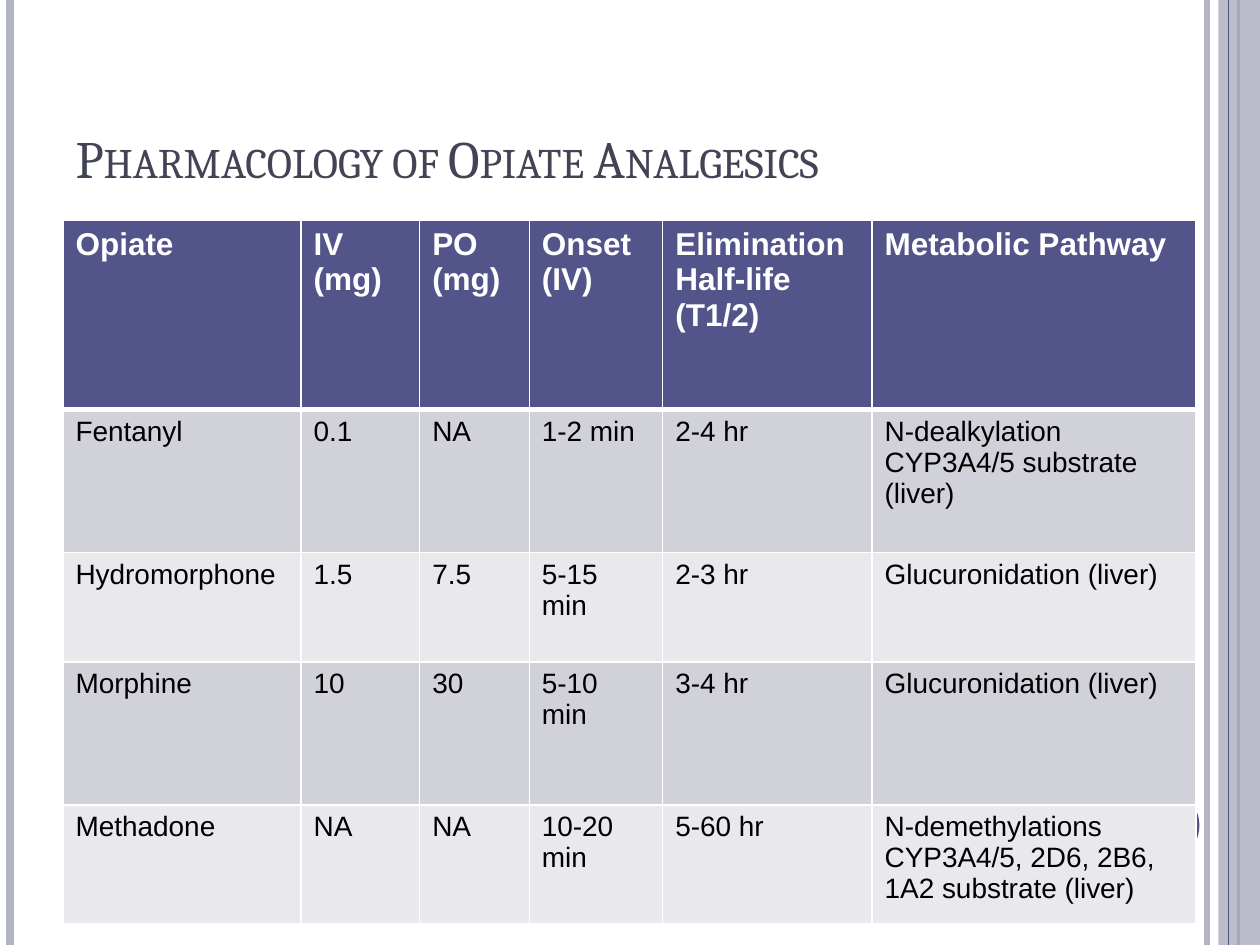
from dataclasses import dataclass

from lxml.etree import SubElement
from pptx import Presentation
from pptx.dml.color import RGBColor as Color
from pptx.enum.shapes import MSO_CONNECTOR as Connector, MSO_SHAPE as Shape
from pptx.enum.text import MSO_ANCHOR as Anchor, PP_ALIGN as Align
from pptx.oxml.ns import qn
from pptx.util import Cm, Pt


@dataclass(frozen=True)
class Theme:
    accent: str = "53548A"
    stripe: str = "B3B4C4"
    title: str = "424456"
    text: str = "000000"
    white: str = "FFFFFF"
    bands: tuple = ("D1D1DA", "E9E9ED")
    title_font: str = "Cambria"
    table_font: str = "Arial"
    title_size: int = 30
    header_size: int = 18
    body_size: int = 16


theme = Theme()


def paint(shape, color, alpha=None):
    """Give a shape a plain fill, with optional opacity in percent."""
    shape.shadow.inherit = False
    shape.line.fill.background()
    shape.fill.solid()
    shape.fill.fore_color.rgb = Color.from_string(color)
    if alpha:
        tint = shape.fill._xPr.find(".//" + qn("a:srgbClr"))
        SubElement(tint, qn("a:alpha"), val=str(alpha * 1000))


def add_border(cell, side, width):
    """Draw one white edge; edges must precede the cell fill."""
    edge = SubElement(cell._tc.get_or_add_tcPr(), qn("a:" + side), w=str(Pt(width)))
    SubElement(SubElement(edge, qn("a:solidFill")), qn("a:srgbClr"), val=theme.white)


deck = Presentation()
deck.slide_width, deck.slide_height = Cm(25.4), Cm(19.05)
page = deck.slides.add_slide(deck.slide_layouts[5])
shapes = page.shapes

# Vertical stripes at both edges: x, colour, width; the band lies over the first three
stripes = [
    (24.33, theme.stripe, 3),
    (0.2, theme.stripe, 4.5),
    (24.97, theme.accent, 1.5),
    (24.77, theme.accent, 0.75),
]
for number, (x, color, width) in enumerate(stripes):
    if number == 3:
        band = shapes.add_shape(Shape.RECTANGLE, Cm(24.56), 0, Cm(0.84), deck.slide_height)
        paint(band, theme.stripe, alpha=87)
    stripe = shapes.add_connector(Connector.STRAIGHT, Cm(x), 0, Cm(x), deck.slide_height)
    stripe.line.color.rgb = Color.from_string(color)
    stripe.line.width = Pt(width)
    SubElement(stripe._element.spPr, qn("a:effectLst"))

# Page number disc, mostly behind the table
disc = shapes.add_shape(Shape.OVAL, Cm(22.66), Cm(15.88), Cm(1.52), Cm(1.52))
paint(disc, theme.accent)

# Title
title = shapes.title
title.left, title.top, title.width, title.height = Cm(1.27), Cm(0.76), Cm(20.75), Cm(3.18)
title.text_frame.vertical_anchor = Anchor.BOTTOM
title.text_frame.text = "Pharmacology of Opiate Analgesics"
para = title.text_frame.paragraphs[0]
para.alignment = Align.LEFT
para.font.name = theme.title_font
para.font.size = Pt(theme.title_size)
para.font.color.rgb = Color.from_string(theme.title)
para.runs[0].font._element.set("cap", "small")

# Table of opiates
rows = [
    ("Opiate", "IV (mg)", "PO (mg)", "Onset (IV)", "Elimination Half-life\n(T1/2)",
     "Metabolic Pathway"),
    ("Fentanyl", "0.1", "NA", "1-2 min", "2-4 hr",
     "N-dealkylation CYP3A4/5 substrate (liver)"),
    ("Hydromorphone", "1.5", "7.5", "5-15 min", "2-3 hr", "Glucuronidation (liver)"),
    ("Morphine", "10", "30", "5-10 min", "3-4 hr", "Glucuronidation (liver)"),
    ("Methadone", "NA", "NA", "10-20 min", "5-60 hr",
     "N-demethylations CYP3A4/5, 2D6, 2B6, 1A2 substrate (liver)"),
]
column_widths = [4.8, 2.39, 2.21, 2.69, 4.22, 6.53]
row_heights = [3.81, 2.88, 2.21, 2.88, 2.39]
table = shapes.add_table(
    len(rows), len(column_widths), Cm(1.27), Cm(4.45),
    Cm(sum(column_widths)), Cm(sum(row_heights)),
).table
for column, width in zip(table.columns, column_widths):
    column.width = Cm(width)

for r, texts in enumerate(rows):
    table.rows[r].height = Cm(row_heights[r])
    header = r == 0
    fill = theme.accent if header else theme.bands[(r - 1) % 2]
    for c, text in enumerate(texts):
        cell = table.cell(r, c)
        cell.text = text
        for side in ("lnL", "lnR", "lnT", "lnB"):
            heavy = (side == "lnB" and r == 0) or (side == "lnT" and r == 1)
            add_border(cell, side, 3 if heavy else 1)
        cell.fill.solid()
        cell.fill.fore_color.rgb = Color.from_string(fill)
        for para in cell.text_frame.paragraphs:
            para.font.name = theme.table_font
            para.font.size = Pt(theme.header_size if header else theme.body_size)
            para.font.bold = header
            para.font.color.rgb = Color.from_string(theme.white if header else theme.text)

deck.save("out.pptx")
